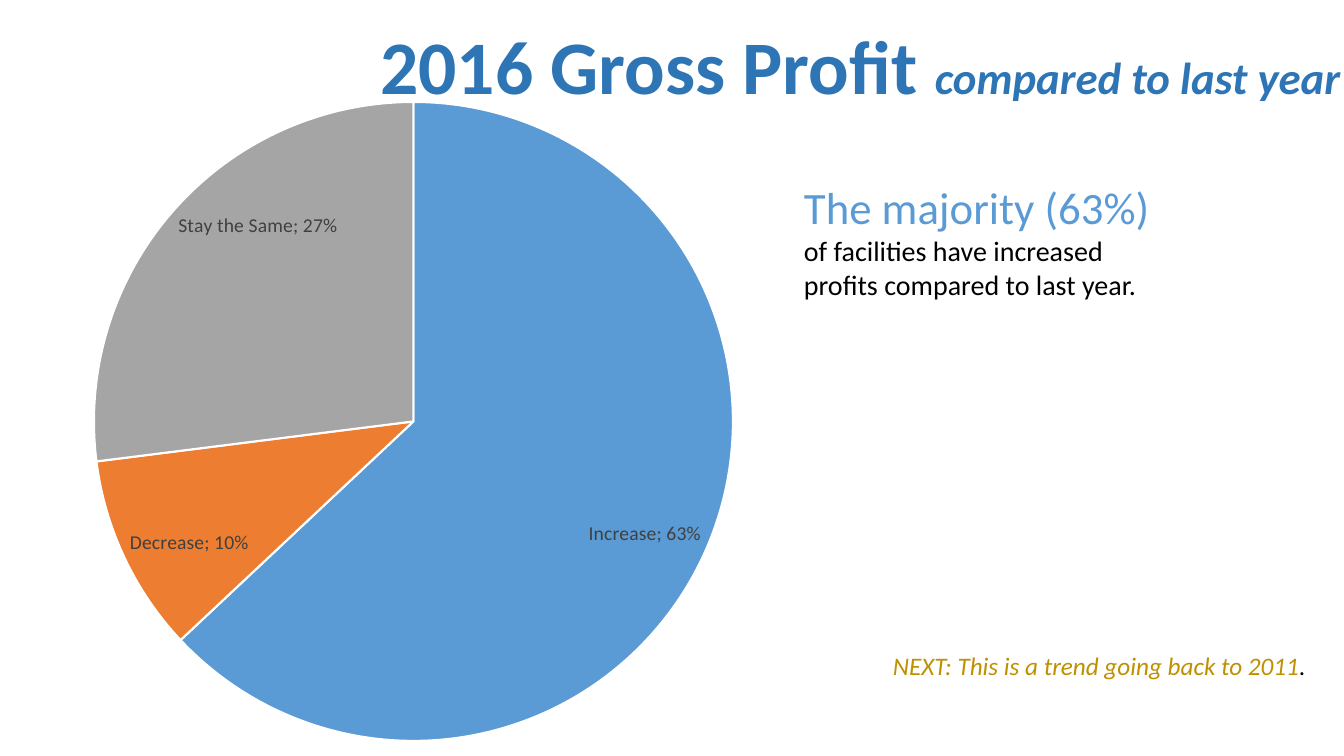
from dataclasses import dataclass

from lxml import etree
from pptx import Presentation
from pptx.chart.data import CategoryChartData
from pptx.dml.color import RGBColor
from pptx.enum.chart import XL_CHART_TYPE, XL_LABEL_POSITION
from pptx.enum.text import MSO_AUTO_SIZE, PP_ALIGN
from pptx.oxml.ns import qn
from pptx.util import Pt

PIE = XL_CHART_TYPE.PIE
INSIDE_END = XL_LABEL_POSITION.INSIDE_END
FIT_SHAPE = MSO_AUTO_SIZE.SHAPE_TO_FIT_TEXT
LEFT, CENTER = PP_ALIGN.LEFT, PP_ALIGN.CENTER

EMU_PER_PX = 914400 / 100.8
BLANK_LAYOUT = 6


@dataclass(frozen=True)
class Theme:
    font: str = "Calibri"
    title: str = "2E75B6"
    title_outline: str = "FEFEFE"
    increase: str = "5B9BD5"
    decrease: str = "ED7D31"
    same: str = "A5A5A5"
    label: str = "404040"
    body: str = "000000"
    next_step: str = "BF9000"
    border: str = "FFFFFF"
    title_size: int = 54
    heading_size: int = 32
    body_size: int = 20
    next_size: int = 18
    label_size: int = 14
    line_width: float = 1.5


def px(length):
    return round(length * EMU_PER_PX)


def rgb(color):
    return RGBColor.from_string(color)


def add_span(para, text, *, font, size, color, bold=False, italic=False, outline=None, outline_width=1.5):
    span = para.add_run()
    span.text = text
    style = span.font
    style.name, style.size = font, Pt(size)
    style.bold, style.italic = bold, italic
    style.color.rgb = rgb(color)
    if outline:
        line = etree.Element(qn("a:ln"), w=str(Pt(outline_width)))
        fill = etree.SubElement(line, qn("a:solidFill"))
        etree.SubElement(fill, qn("a:srgbClr"), val=outline)
        span.font._element.insert(0, line)


class PageBuilder:
    def __init__(self, page, theme):
        self.page = page
        self.theme = theme

    def text(self, left, top, width, height, spans, align=LEFT, wrap=False):
        """Add a one-paragraph text box; each span is a text and its format."""
        box = self.page.shapes.add_textbox(px(left), px(top), px(width), px(height))
        frame = box.text_frame
        frame.word_wrap = wrap
        frame.auto_size = FIT_SHAPE
        para = frame.paragraphs[0]
        para.alignment = align
        for text, style in spans:
            add_span(para, text, font=self.theme.font, **style)

    def pie(self, left, top, width, height, slices, circle):
        """Add a pie; circle is its left, top and diameter within the chart."""
        data = CategoryChartData(number_format="0%")
        data.categories = [name for name, _, _ in slices]
        data.add_series("Series 1", [value for _, value, _ in slices])
        frame = self.page.shapes.add_chart(PIE, px(left), px(top), px(width), px(height), data)
        chart = frame.chart
        chart.has_title = False
        chart.has_legend = False
        chart.font.name = self.theme.font
        plot = chart.plots[0]
        plot.vary_by_categories = True
        for index, (_, _, color) in enumerate(slices):
            piece = plot.series[0].points[index].format
            piece.fill.solid()
            piece.fill.fore_color.rgb = rgb(color)
            piece.line.color.rgb = rgb(self.theme.border)
            piece.line.width = Pt(self.theme.line_width)
        self.label_slices(plot)
        circle_left, circle_top, diameter = circle
        self.place_plot(chart, x=circle_left / width, y=circle_top / height,
                        w=diameter / width, h=diameter / height)

    def label_slices(self, plot):
        plot.has_data_labels = True
        labels = plot.data_labels
        labels.show_category_name = labels.show_value = True
        labels.show_percentage = False
        labels.number_format = "0%"
        labels.number_format_is_linked = False
        labels.position = INSIDE_END
        labels.font.name = self.theme.font
        labels.font.size = Pt(self.theme.label_size)
        labels.font.color.rgb = rgb(self.theme.label)
        separator = etree.Element(qn("c:separator"))
        separator.text = "; "
        labels._element.find(qn("c:showBubbleSize")).addnext(separator)

    def place_plot(self, chart, **fractions):
        """Fix the inner plot area as fractions of the chart."""
        area = chart._chartSpace.find(".//" + qn("c:plotArea"))
        for automatic in area.findall(qn("c:layout")):
            area.remove(automatic)
        layout = etree.Element(qn("c:layout"))
        manual = etree.SubElement(layout, qn("c:manualLayout"))
        settings = {"layoutTarget": "inner", "xMode": "edge", "yMode": "edge"}
        settings.update((name, f"{value:.4f}") for name, value in fractions.items())
        for name, value in settings.items():
            etree.SubElement(manual, qn("c:" + name), val=value)
        area.insert(0, layout)


def main():
    theme = Theme()
    deck = Presentation()
    deck.slide_width, deck.slide_height = px(1344), px(756)
    page = deck.slides.add_slide(deck.slide_layouts[BLANK_LAYOUT])
    builder = PageBuilder(page, theme)

    title = dict(color=theme.title, bold=True, outline=theme.title_outline,
                 outline_width=theme.line_width)
    builder.text(365, 14, 991, 102, [
        ("2016 Gross Profit ", dict(title, size=theme.title_size)),
        ("compared to last year", dict(title, size=theme.heading_size, italic=True)),
    ], align=CENTER)

    builder.pie(-143, 88, 1002, 668, [
        ("Increase", 0.63, theme.increase),
        ("Decrease", 0.1, theme.decrease),
        ("Stay the Same", 0.27, theme.same),
    ], circle=(237, 14, 639))

    builder.text(794, 175, 388, 132, [
        ("The majority (63%) ", dict(size=theme.heading_size, color=theme.increase)),
        ("of facilities have increased profits compared to last year.",
         dict(size=theme.body_size, color=theme.body)),
    ], wrap=True)

    next_step = dict(size=theme.next_size, italic=True)
    builder.text(883, 645, 437, 40, [
        ("NEXT: This is a trend going back to 2011", dict(next_step, color=theme.next_step)),
        (".", dict(next_step, color=theme.body)),
    ])

    deck.save("out.pptx")


if __name__ == "__main__":
    main()
